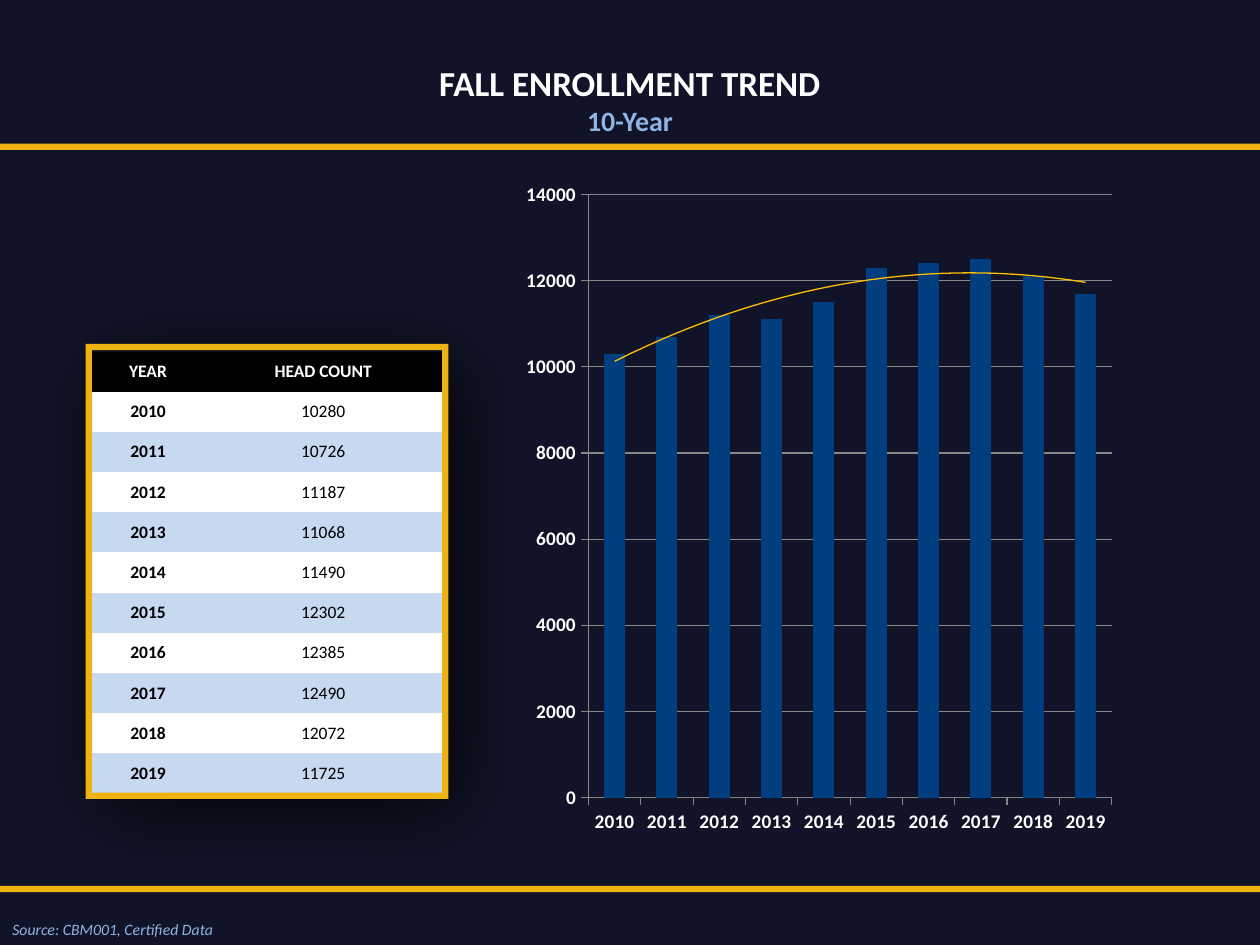
from dataclasses import dataclass

from lxml import etree
from pptx import Presentation
from pptx.chart.data import CategoryChartData
from pptx.dml.color import RGBColor
from pptx.enum import chart as charts, shapes, text
from pptx.oxml import parse_xml
from pptx.oxml.ns import nsdecls, qn
from pptx.util import Inches, Pt

FONT = "Calibri"
GOLD, WHITE, BLACK = "EEB211", "FFFFFF", "000000"
NAVY, SKY, PALE, BLUE, GREY = "111428", "8EB4E3", "C6D9F1", "003E80", "868686"
BAR = 0.05
NO_STYLE = "{2D5ABB26-0587-4C30-8999-92F81FD0307C}"

COUNTS = {
    "2010": 10280, "2011": 10726, "2012": 11187, "2013": 11068, "2014": 11490,
    "2015": 12302, "2016": 12385, "2017": 12490, "2018": 12072, "2019": 11725,
}


@dataclass
class Box:
    """Place on a grid of 10 columns by 7.5 rows, one inch each."""
    x: float
    y: float
    w: float
    h: float

    def emu(self) -> tuple:
        return tuple(Inches(v) for v in (self.x, self.y, self.w, self.h))


GRID = Box(0.73, 2.79, 2.78, 3.51)
RULES = [
    Box(0, 7.03, 10, BAR),
    Box(0, 1.14, 10, BAR),
    Box(GRID.x, 6.29, GRID.w, BAR),
    Box(GRID.x, 2.73, GRID.w, BAR),
    Box(GRID.x - BAR, 2.73, BAR, 3.61),
    Box(GRID.x + GRID.w, 2.73, BAR, 3.61),
]


def rgb(code: str) -> RGBColor:
    return RGBColor.from_string(code)


def paint(part, code: str) -> None:
    part.fill.solid()
    part.fill.fore_color.rgb = rgb(code)


def style(font, size: float, code: str, bold=False, italic=False) -> None:
    font.name, font.size = FONT, Pt(size)
    font.bold, font.italic = bold, italic
    font.color.rgb = rgb(code)


def add_rule(slide, box: Box) -> None:
    rule = slide.shapes.add_shape(shapes.MSO_SHAPE.RECTANGLE, *box.emu())
    rule.shadow.inherit = False
    paint(rule, GOLD)
    rule.line.fill.background()


def add_title(slide) -> None:
    title = slide.shapes.title
    title.left, title.top, title.width, title.height = Box(0, 0.44, 10, 1.01).emu()
    frame = title.text_frame
    frame.text = "FALL ENROLLMENT TREND\n10-Year"
    frame.vertical_anchor = text.MSO_ANCHOR.TOP
    for para, size, code in zip(frame.paragraphs, (20, 16), (WHITE, SKY)):
        para.alignment = text.PP_ALIGN.CENTER
        style(para.font, size, code, bold=True)


def add_source(slide) -> None:
    frame = slide.shapes.add_textbox(*Box(0, 7.25, 1.84, 0.25).emu()).text_frame
    frame.word_wrap = False
    frame.text = "Source: CBM001, Certified Data"
    style(frame.paragraphs[0].font, 9, SKY, italic=True)


def fill_cell(cell, words: str, back: str, fore: str, bold: bool, pad: float) -> None:
    paint(cell, back)
    cell.text = words
    cell.vertical_anchor = text.MSO_ANCHOR.MIDDLE
    cell.margin_left = cell.margin_right = Inches(pad)
    cell.margin_top = cell.margin_bottom = Inches(pad)
    para = cell.text_frame.paragraphs[0]
    para.alignment = text.PP_ALIGN.CENTER
    style(para.font, 10, fore, bold)


def add_counts(slide) -> None:
    rows = [("YEAR", "HEAD COUNT"), *((y, str(n)) for y, n in COUNTS.items())]
    table = slide.shapes.add_table(len(rows), 2, *GRID.emu()).table
    for col, width in zip(table.columns, (0.89, GRID.w - 0.89)):
        col.width = Inches(width)
    for r, row in enumerate(rows):
        head = r == 0
        back = BLACK if head else (PALE, WHITE)[r % 2]
        for c, words in enumerate(row):
            fill_cell(table.cell(r, c), words, back, WHITE if head else BLACK,
                      head or c == 0, 0.04 if head else 0.01)
    props = table._tbl.tblPr
    props.find(qn("a:tableStyleId")).text = NO_STYLE
    props.insert(0, parse_xml(
        f'<a:effectLst {nsdecls("a")}><a:outerShdw blurRad="635000" dist="139700" '
        f'dir="2700000" algn="tl" rotWithShape="0"><a:srgbClr val="{BLACK}">'
        '<a:alpha val="90000"/></a:srgbClr></a:outerShdw></a:effectLst>'))


def set_plot(chart, **shares: float) -> None:
    """Fix the inner plot area by shares of the chart's size."""
    area = chart._chartSpace.chart.plotArea
    for old in area.findall(qn("c:layout")):
        area.remove(old)
    layout = etree.Element(qn("c:layout"))
    manual = etree.SubElement(layout, qn("c:manualLayout"))
    values = {"layoutTarget": "inner", "xMode": "edge", "yMode": "edge", **shares}
    for name, value in values.items():
        etree.SubElement(manual, qn(f"c:{name}"), val=str(value))
    area.insert(0, layout)


def add_trend(series) -> None:
    line = parse_xml(
        f'<c:trendline {nsdecls("c", "a")}><c:spPr><a:ln w="9525"><a:solidFill>'
        '<a:srgbClr val="FFC000"/></a:solidFill></a:ln></c:spPr>'
        '<c:trendlineType val="poly"/><c:order val="2"/>'
        '<c:dispRSqr val="0"/><c:dispEq val="0"/></c:trendline>')
    series._element.find(qn("c:cat")).addprevious(line)


def add_chart(slide) -> None:
    data = CategoryChartData()
    data.categories = list(COUNTS)
    data.add_series("Series 1", [round(n, -2) for n in COUNTS.values()])
    chart = slide.shapes.add_chart(charts.XL_CHART_TYPE.COLUMN_CLUSTERED,
                                   *Box(4.03, 1.45, 6.1, 5.49).emu(), data).chart
    chart.has_legend = chart.has_title = False
    style(chart.font, 18, BLACK)
    for axis in (chart.category_axis, chart.value_axis):
        style(axis.tick_labels.font, 11, WHITE, bold=True)
        axis.major_tick_mark = charts.XL_TICK_MARK.OUTSIDE
        axis.format.line.color.rgb = rgb(GREY)
    scale = chart.value_axis
    scale.minimum_scale, scale.maximum_scale, scale.major_unit = 0, 14000, 2000
    scale.major_gridlines.format.line.color.rgb = rgb(GREY)
    plot = chart.plots[0]
    plot.gap_width, plot.vary_by_categories = 150, False
    series = plot.series[0]
    paint(series.format, BLUE)
    add_trend(series)
    set_plot(chart, x=0.105, y=0.015, w=0.681, h=0.874)


def main() -> None:
    deck = Presentation()
    deck.slide_width, deck.slide_height = Inches(10), Inches(7.5)
    slide = deck.slides.add_slide(deck.slide_layouts[5])
    paint(slide.background, NAVY)
    add_counts(slide)
    add_chart(slide)
    add_title(slide)
    add_source(slide)
    for box in RULES:
        add_rule(slide, box)
    deck.save("out.pptx")


if __name__ == "__main__":
    main()
